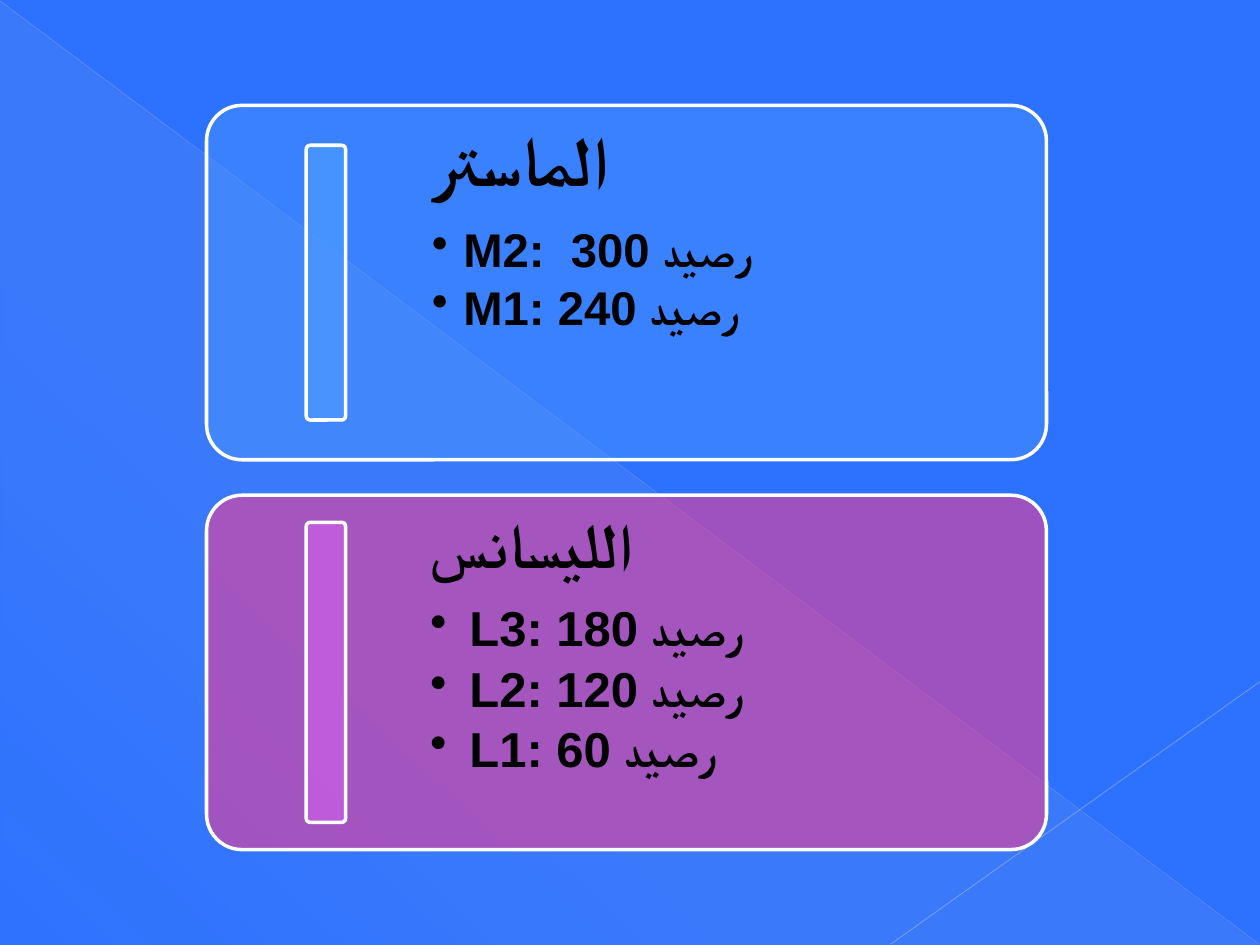
from dataclasses import dataclass

from lxml import etree
from pptx import Presentation
from pptx import util as u
from pptx.dml.color import RGBColor
from pptx.enum import shapes as s
from pptx.oxml import ns, parse_xml

HEX = {
    "back": "2C71FF", "glow": "D2D2D2", "fall": "BFBFBF", "rise": "C6C6C6",
    "edge": "FFFFFF", "ink": "000000",
    "blue": "4C99FF", "pink": "FF388C", "violet": "E366FF",
}
LEFT, WIDE, HIGH = 118, 480, 202.5
BAR_X, BAR_W = 175, 22.5
TEXT_X = 234.75


@dataclass
class Card:
    top: float
    fill: str
    alpha: int
    bar: str
    bar_alpha: int
    bar_h: float
    title: str
    size: float
    items: list[str]
    item_size: float
    indent: float
    inset: float


CARDS = [
    Card(60.25, "blue", 41, "blue", 71, 157, "الماستر", 40,
         ["M2:  300 رصيد", "M1: 240 رصيد"], 27, 18, 12),
    Card(283, "pink", 54, "violet", 43, 171.5, "الليسانس", 36,
         ["L3: 180 رصيد", "L2: 120 رصيد", "L1: 60 رصيد"], 28, 22.5, 11),
]


def rgb(name: str) -> RGBColor:
    return RGBColor.from_string(HEX[name])


def fade(node, alpha: int) -> None:
    """Set the opacity, in percent, of every colour below node."""
    for tone in node.iter(ns.qn("a:srgbClr")):
        etree.SubElement(tone, ns.qn("a:alpha"), val=str(alpha * 1000))


def add_glow(slide) -> None:
    """Draw the faint triangle that fades towards the lower left."""
    shape = slide.shapes.add_shape(
        s.MSO_SHAPE.RIGHT_TRIANGLE, u.Pt(0.5), u.Pt(1), u.Pt(719), u.Pt(539))
    shape.shadow.inherit = False
    shape.line.fill.background()
    stops = "".join(
        f'<a:gs pos="{pos * 1000}"><a:srgbClr val="{HEX["glow"]}">'
        f'<a:alpha val="{alpha * 1000}"/></a:srgbClr></a:gs>'
        for pos, alpha in ((0, 10), (70, 8), (100, 1)))
    grad = parse_xml(
        f'<a:gradFill {ns.nsdecls("a")} rotWithShape="1"><a:gsLst>{stops}'
        f'</a:gsLst><a:lin ang="{133 * 60000}" scaled="0"/></a:gradFill>')
    shape.element.spPr.find(ns.qn("a:prstGeom")).addnext(grad)


def add_ray(slide, ends: tuple, tone: str, width: float, alpha: int) -> None:
    ray = slide.shapes.add_connector(
        s.MSO_CONNECTOR.STRAIGHT, *(u.Pt(end) for end in ends))
    ray.line.color.rgb = rgb(tone)
    ray.line.width = u.Pt(width)
    prop = ray.element.spPr
    fade(prop, alpha)
    etree.SubElement(prop, ns.qn("a:effectLst"))


def add_panel(slide, box: tuple, tone: str, alpha: int) -> None:
    panel = slide.shapes.add_shape(
        s.MSO_SHAPE.ROUNDED_RECTANGLE, *(u.Pt(side) for side in box))
    panel.adjustments[0] = 0.1
    panel.shadow.inherit = False
    panel.fill.solid()
    panel.fill.fore_color.rgb = rgb(tone)
    fade(panel.element.spPr, alpha)
    panel.line.color.rgb = rgb("edge")
    panel.line.width = u.Pt(2)


def style(para, size: float, after: float) -> None:
    para.line_spacing = 0.9
    para.space_after = u.Pt(round(size * after, 1))
    font = para.font
    font.name, font.size, font.bold = "Arial", u.Pt(size), True
    font.color.rgb = rgb("ink")


def add_bullet(para, indent: float) -> None:
    para.level = 1
    prop = para._p.get_or_add_pPr()
    prop.set("marL", str(u.Pt(indent)))
    prop.set("indent", str(-u.Pt(indent)))
    mark = etree.Element(ns.qn("a:buChar"), char="•")
    prop.find(ns.qn("a:defRPr")).addprevious(mark)


def add_text(slide, card: Card) -> None:
    box = slide.shapes.add_textbox(
        u.Pt(TEXT_X), u.Pt(card.top), u.Pt(LEFT + WIDE - TEXT_X), u.Pt(HIGH))
    frame = box.text_frame
    frame.word_wrap = True
    frame.margin_left = frame.margin_right = u.Pt(card.inset)
    frame.margin_top = frame.margin_bottom = u.Pt(card.inset)
    head = frame.paragraphs[0]
    head.text = card.title
    style(head, card.size, 0.35)
    for item in card.items:
        para = frame.add_paragraph()
        para.text = item
        style(para, card.item_size, 0.15)
        add_bullet(para, card.indent)


def add_card(slide, card: Card) -> None:
    add_panel(slide, (LEFT, card.top, WIDE, HIGH), card.fill, card.alpha)
    add_text(slide, card)
    bar_y = card.top + (HIGH - card.bar_h) / 2
    add_panel(slide, (BAR_X, bar_y, BAR_W, card.bar_h),
              card.bar, card.bar_alpha)


def main() -> None:
    deck = Presentation()
    deck.slide_width, deck.slide_height = u.Pt(720), u.Pt(540)
    slide = deck.slides.add_slide(deck.slide_layouts[6])
    slide.background.fill.solid()
    slide.background.fill.fore_color.rgb = rgb("back")
    add_glow(slide)
    add_ray(slide, (0, 0.5, 719.5, 539.5), "fall", 0.39, 35)
    add_ray(slide, (720, 389.5, 509, 539.5), "rise", 0.47, 45)
    for card in CARDS:
        add_card(slide, card)
    deck.save("out.pptx")


if __name__ == "__main__":
    main()
